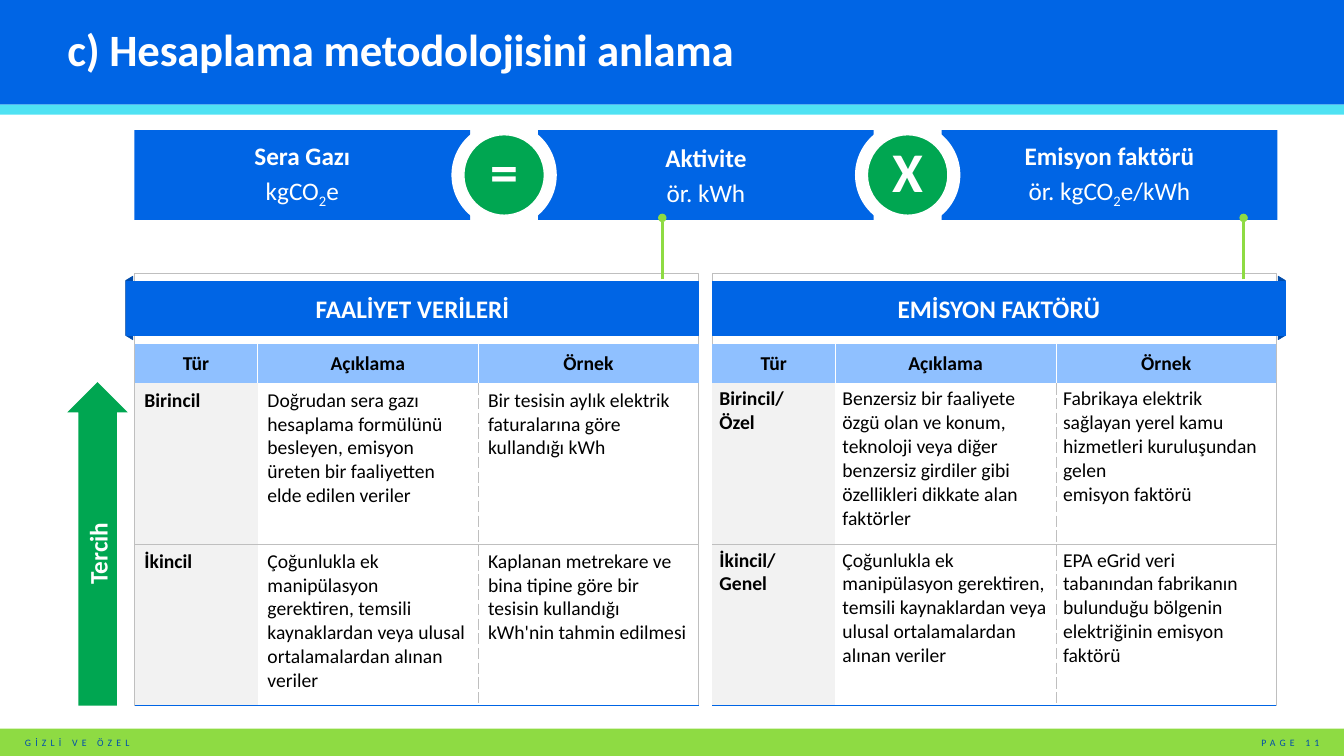
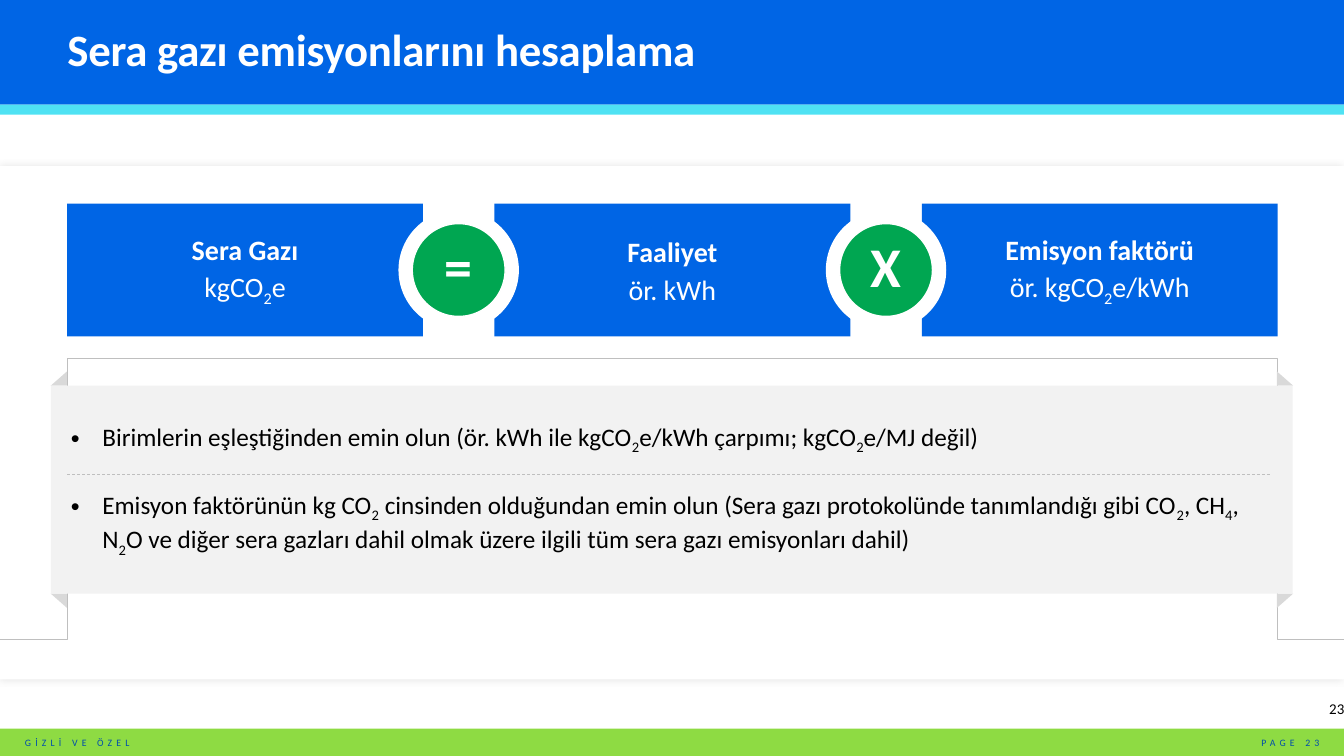
from lxml import etree
from pptx import Presentation
from pptx.dml.color import RGBColor
from pptx.enum.dml import MSO_LINE
from pptx.enum.shapes import MSO_CONNECTOR, MSO_SHAPE
from pptx.enum.text import MSO_ANCHOR, PP_ALIGN
from pptx.oxml.ns import qn
from pptx.util import Cm, Pt

RECTANGLE, OVAL = MSO_SHAPE.RECTANGLE, MSO_SHAPE.OVAL
TRAPEZOID, TRIANGLE = MSO_SHAPE.TRAPEZOID, MSO_SHAPE.ISOSCELES_TRIANGLE
UP_ARROW, STRAIGHT = MSO_SHAPE.UP_ARROW, MSO_CONNECTOR.STRAIGHT
LEFT, CENTER, RIGHT = PP_ALIGN.LEFT, PP_ALIGN.CENTER, PP_ALIGN.RIGHT
TOP, MIDDLE = MSO_ANCHOR.TOP, MSO_ANCHOR.MIDDLE
DASH = MSO_LINE.DASH

WIDTH, HEIGHT = 33.87, 19.05
FONT = "Calibri"
DEFAULT_INSETS = (0.25, 0.13, 0.25, 0.13)
NO_INSETS = (0, 0, 0, 0)
PLAIN_TABLE_STYLE = "{2D5ABB26-0587-4C30-8999-92F81FD0307C}"
COLORS = {
    "blue": "0065E5", "navy": "004CAC", "sky": "8FC0FF", "cyan": "4FE2F3",
    "green": "00A651", "lime": "8EDB43", "white": "FFFFFF", "black": "000000",
    "pale": "F2F2F2", "fold": "D9D9D9", "rule": "BFBFBF",
}

# Content: text between bars is subscript
CONFIDENTIAL = "GİZLİ VE ÖZEL"
OPERATORS = ["=", "X"]
METHOD = {
    "title": "c) Hesaplama metodolojisini anlama",
    "page": 11,
    "terms": [("Sera Gazı", "kgCO|2|e"), ("Aktivite", "ör. kWh"),
              ("Emisyon faktörü", "ör. kgCO|2|e/kWh")],
    "arrow": "Tercih",
    "columns": ["Tür", "Açıklama", "Örnek"],
    "panels": [
        {"heading": "FAALİYET VERİLERİ", "left": 3.39, "band_left": 3.18,
         "fold": (2.46, 270), "connector": 16.69, "insets": DEFAULT_INSETS,
         "rows": [
             ["Birincil",
              "Doğrudan sera gazı hesaplama formülünü besleyen, emisyon üreten "
              "bir faaliyetten elde edilen veriler",
              "Bir tesisin aylık elektrik faturalarına göre kullandığı kWh"],
             ["İkincil",
              "Çoğunlukla ek manipülasyon gerektiren, temsili kaynaklardan veya "
              "ulusal ortalamalardan alınan veriler",
              "Kaplanan metrekare ve bina tipine göre bir tesisin kullandığı "
              "kWh'nin tahmin edilmesi"]]},
        {"heading": "EMİSYON FAKTÖRÜ", "left": 17.95, "band_left": 17.96,
         "fold": (31.5, 90), "connector": 31.34, "insets": (0.18, 0.1, 0.18, 0.1),
         "rows": [
             ["Birincil/\nÖzel",
              "Benzersiz bir faaliyete özgü olan ve konum, teknoloji veya diğer "
              "benzersiz girdiler gibi özellikleri dikkate alan faktörler",
              "Fabrikaya elektrik sağlayan yerel kamu hizmetleri kuruluşundan "
              "gelen\nemisyon faktörü"],
             ["İkincil/\nGenel",
              "Çoğunlukla ek manipülasyon gerektiren, temsili kaynaklardan veya "
              "ulusal ortalamalardan alınan veriler",
              "EPA eGrid veri tabanından fabrikanın bulunduğu bölgenin "
              "elektriğinin emisyon faktörü"]]},
    ],
}
CALCULATION = {
    "title": "Sera gazı emisyonlarını hesaplama",
    "page": 23,
    "terms": [("Sera Gazı", "kgCO|2|e"), ("Faaliyet", "ör. kWh"),
              ("Emisyon faktörü", "ör. kgCO|2|e/kWh")],
    "bullets": [
        "Birimlerin eşleştiğinden emin olun (ör. kWh ile kgCO|2|e/kWh çarpımı; "
        "kgCO|2|e/MJ değil)",
        "Emisyon faktörünün kg CO|2| cinsinden olduğundan emin olun (Sera gazı "
        "protokolünde tanımlandığı gibi CO|2|, CH|4|, N|2|O ve diğer sera gazları "
        "dahil olmak üzere ilgili tüm sera gazı emisyonları dahil)",
    ],
}


def rgb(name):
    return RGBColor.from_string(COLORS[name])


def add_runs(paragraph, text, size, color, bold=False, spacing=None):
    for index, part in enumerate(text.split("|")):
        for line_index, line in enumerate(part.split("\n")):
            if line_index:
                paragraph.add_line_break()
            run = paragraph.add_run()
            run.text = line
            font = run.font
            font.name, font.size, font.bold = FONT, Pt(size), bold
            font.color.rgb = rgb(color)
            properties = run._r.get_or_add_rPr()
            if index % 2:
                properties.set("baseline", "-25000")
            if spacing:
                properties.set("spc", str(spacing))


def set_frame(frame, anchor, insets):
    frame.word_wrap = True
    frame.vertical_anchor = anchor
    (frame.margin_left, frame.margin_top,
     frame.margin_right, frame.margin_bottom) = map(Cm, insets)


def add_text(slide, box, text, size, color, align=LEFT, anchor=TOP,
             insets=DEFAULT_INSETS, **style):
    frame = slide.shapes.add_textbox(*map(Cm, box)).text_frame
    set_frame(frame, anchor, insets)
    paragraph = frame.paragraphs[0]
    paragraph.alignment = align
    add_runs(paragraph, text, size, color, **style)
    return paragraph


def paint(shape, fill=None, line=None, width=0.5):
    shape.shadow.inherit = False
    if fill:
        shape.fill.solid()
        shape.fill.fore_color.rgb = rgb(fill)
    else:
        shape.fill.background()
    if line:
        shape.line.color.rgb = rgb(line)
        shape.line.width = Pt(width)
    else:
        shape.line.fill.background()


def add_shape(slide, kind, box, fill=None, line=None, width=0.5, adjust=()):
    shape = slide.shapes.add_shape(kind, *map(Cm, box))
    paint(shape, fill, line, width)
    for index, value in enumerate(adjust):
        shape.adjustments[index] = value
    return shape


def label(shape, lines, size, insets=DEFAULT_INSETS):
    """Centred white lines, the first one bold."""
    frame = shape.text_frame
    set_frame(frame, MIDDLE, insets)
    for index, text in enumerate(lines):
        paragraph = frame.add_paragraph() if index else frame.paragraphs[0]
        paragraph.alignment = CENTER
        if len(lines) > 1:
            paragraph.space_after = Pt(3)
        add_runs(paragraph, text, size, "white", bold=index == 0)


def add_line(slide, start, end, color, width):
    connector = slide.shapes.add_connector(STRAIGHT, *map(Cm, start + end))
    connector.line.color.rgb = rgb(color)
    connector.line.width = Pt(width)
    etree.SubElement(connector._element.spPr, qn("a:effectLst"))
    return connector


def new_slide(presentation, content):
    slide = presentation.slides.add_slide(presentation.slide_layouts[6])
    for top, height, color in [(0, 2.64, "blue"), (18.36, 0.69, "lime"),
                               (2.64, 0.25, "cyan")]:
        add_shape(slide, RECTANGLE, (0, top, WIDTH, height), color)
    for left, width, text, align in [
            (0.38, 15.93, CONFIDENTIAL, LEFT),
            (30.73, 2.77, f"PAGE {content['page']}", RIGHT)]:
        add_text(slide, (left, 18.44, width, 0.56), text, 7, "navy", align, spacing=300)
    return slide


def add_title(slide, text):
    title = add_text(slide, (1.7, 0.46, 30.43, 1.73), text, 32, "white",
                     anchor=MIDDLE, insets=NO_INSETS, bold=True, spacing=-20)
    title.line_spacing = 0.85


def add_equation(slide, terms, left, top, width, height, pitch, rings, size):
    for index, term in enumerate(terms):
        box = (left + index * pitch, top, width, height)
        label(add_shape(slide, RECTANGLE, box, "blue"), term, size)
    for index, operator in enumerate(OPERATORS):
        center_x = left + index * pitch + (width + pitch) / 2
        center_y = top + height / 2
        for diameter, fill in zip(rings, ["white", "green"]):
            box = (center_x - diameter / 2, center_y - diameter / 2, diameter, diameter)
            circle = add_shape(slide, OVAL, box, fill, "white", 1)
        label(circle, [operator], 40, (0.25, 0, 0.25, 0.25))


def add_border(cell, side, color, width=0.5, dash="solid"):
    line = etree.SubElement(cell._tc.get_or_add_tcPr(), qn(f"a:ln{side}"),
                            w=str(Pt(width)))
    fill = etree.SubElement(line, qn("a:solidFill"))
    etree.SubElement(fill, qn("a:srgbClr"), val=COLORS[color])
    etree.SubElement(line, qn("a:prstDash"), val=dash)


def add_data_table(slide, panel, columns):
    rows = [columns] + panel["rows"]
    widths, heights = [3.1, 5.56, 5.56], [1, 4.06, 4.06]
    box = (panel["left"], 8.66, sum(widths), sum(heights))
    table = slide.shapes.add_table(len(rows), len(columns), *map(Cm, box)).table
    table.first_row = table.horz_banding = False
    table._tbl.tblPr.find(qn("a:tableStyleId")).text = PLAIN_TABLE_STYLE
    for column, width in zip(table.columns, widths):
        column.width = Cm(width)
    for row, height in zip(table.rows, heights):
        row.height = Cm(height)
    for row, texts in enumerate(rows):
        header = row == 0
        for column, text in enumerate(texts):
            cell = table.cell(row, column)
            # Borders come before the fill: left, right, top, bottom
            for side, inner in [("L", column > 0), ("R", column < 2)]:
                if header and inner:
                    add_border(cell, side, "white")
                elif inner and (column == 2 or (column, side) == (1, "R")):
                    add_border(cell, side, "rule", dash="dash")
            if row == 2:
                add_border(cell, "T", "rule")
                add_border(cell, "B", "blue", 1)
            elif row == 1:
                add_border(cell, "B", "rule")
            if header or column == 0:
                cell.fill.solid()
                cell.fill.fore_color.rgb = rgb("sky" if header else "pale")
            else:
                cell.fill.background()
            cell.vertical_anchor = MIDDLE if header else TOP
            (cell.margin_left, cell.margin_top,
             cell.margin_right, cell.margin_bottom) = map(Cm, panel["insets"])
            paragraph = cell.text_frame.paragraphs[0]
            paragraph.alignment = CENTER if header else LEFT
            add_runs(paragraph, text, 14, "black", bold=header or column == 0)


def build_method(presentation):
    slide = new_slide(presentation, METHOD)
    add_title(slide, METHOD["title"])
    arrow = add_shape(slide, UP_ARROW, (1.7, 9.63, 1.52, 8.15), "green", adjust=(0.64, 0.5))
    label(arrow, [METHOD["arrow"]], 18)
    arrow.text_frame._txBody.bodyPr.set("vert", "vert270")
    add_equation(slide, METHOD["terms"], 3.39, 3.28, 8.46, 2.26, 10.17, (2.62, 2.03), 18)
    for panel in METHOD["panels"]:
        fold_left, rotation = panel["fold"]
        fold = add_shape(slide, TRAPEZOID, (fold_left, 7.67, 1.6, 0.18),
                         "navy", "navy", adjust=(0.6,))
        fold.rotation = rotation
        add_shape(slide, RECTANGLE, (panel["left"], 6.88, 14.22, 10.9), line="rule")
        add_data_table(slide, panel, METHOD["columns"])
        x = panel["connector"]
        connector = add_line(slide, (x, 7.04), (x, 5.49), "lime", 2)
        etree.SubElement(connector.line._get_or_add_ln(), qn("a:tailEnd"), type="oval")
        band = add_shape(slide, RECTANGLE, (panel["band_left"], 7.09, 14.43, 1.37),
                         "blue", "blue")
        label(band, [panel["heading"]], 18)


def build_calculation(presentation):
    slide = new_slide(presentation, CALCULATION)
    # Backdrop with a soft glow
    backdrop = add_shape(slide, RECTANGLE, (0, 4.19, WIDTH, 12.93), "white")
    effects = backdrop._element.spPr.find(qn("a:effectLst"))
    shadow = etree.SubElement(effects, qn("a:outerShdw"), blurRad=str(Pt(5)), dist="0")
    color = etree.SubElement(shadow, qn("a:srgbClr"), val=COLORS["rule"])
    etree.SubElement(color, qn("a:alpha"), val="40000")
    add_title(slide, CALCULATION["title"])
    add_text(slide, (32.23, 17.65, 1.65, 0.43), str(CALCULATION["page"]), 10.7, "black",
             RIGHT, MIDDLE, NO_INSETS)
    add_equation(slide, CALCULATION["terms"], 1.69, 5.13, 8.97, 3.35, 10.77, (3, 2.34), 20)
    # Frame line and folded corners behind the band
    left, right, top, bottom = 1.69, 32.18, 9.04, 16.1
    corners = [(0, bottom), (left, bottom), (left, top), (right, top),
               (right, bottom), (WIDTH, bottom)]
    points = [(Cm(x), Cm(y)) for x, y in corners]
    builder = slide.shapes.build_freeform(*points[0])
    builder.add_line_segments(points[1:], close=False)
    paint(builder.convert_to_shape(), line="rule")
    for x, flip_h in [(1.28, "1"), (right, "0")]:
        for y, flip_v in [(9.36, "0"), (14.96, "1")]:
            fold = add_shape(slide, TRIANGLE, (x, y, 0.41, 0.36), "fold", adjust=(0,))
            transform = fold._element.spPr.find(qn("a:xfrm"))
            transform.set("flipH", flip_h)
            transform.set("flipV", flip_v)
    # Bulleted band
    band = add_shape(slide, RECTANGLE, (1.28, 9.72, 31.3, 5.24), "pale")
    frame = band.text_frame
    set_frame(frame, MIDDLE, (0.51, 0.25, 0.51, 0.25))
    for index, text in enumerate(CALCULATION["bullets"]):
        paragraph = frame.add_paragraph() if index else frame.paragraphs[0]
        paragraph.alignment = LEFT
        paragraph.space_before = Pt(12 if index else 0)
        paragraph.space_after = Pt(12)
        properties = paragraph._p.get_or_add_pPr()
        properties.set("marL", str(Cm(0.79)))
        properties.set("indent", str(-Cm(0.79)))
        etree.SubElement(properties, qn("a:buFont"), typeface="Arial")
        etree.SubElement(properties, qn("a:buChar"), char="•")
        add_runs(paragraph, text, 18, "black")
    add_line(slide, (left, 11.96), (32, 11.96), "rule", 0.5).line.dash_style = DASH


def main():
    presentation = Presentation()
    presentation.slide_width, presentation.slide_height = Cm(WIDTH), Cm(HEIGHT)
    build_method(presentation)
    build_calculation(presentation)
    presentation.save("out.pptx")


if __name__ == "__main__":
    main()
